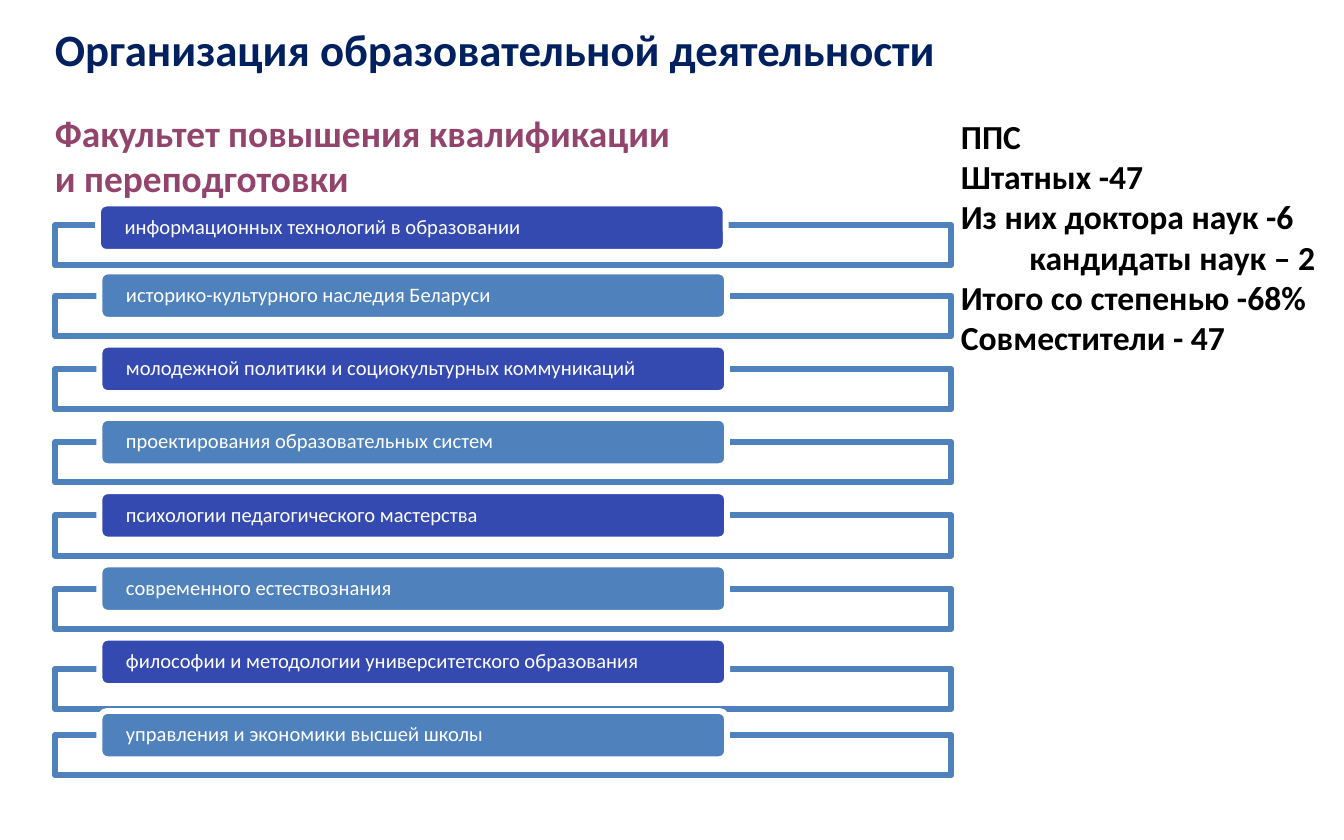
from dataclasses import dataclass

from lxml.etree import SubElement
from pptx import Presentation
from pptx.dml.color import RGBColor
from pptx.enum.shapes import MSO_SHAPE
from pptx.enum.text import MSO_ANCHOR, MSO_AUTO_SIZE, PP_ALIGN
from pptx.oxml.ns import qn
from pptx.util import Inches, Pt

# Content
TITLE = "Организация образовательной деятельности"
SUBTITLE = "Факультет повышения квалификации и переподготовки"
DEPARTMENTS = [
    "информационных технологий в образовании",
    "историко-культурного наследия Беларуси",
    "молодежной политики и социокультурных коммуникаций",
    "проектирования образовательных систем",
    "психологии педагогического мастерства",
    "современного естествознания",
    "философии и методологии университетского образования",
    "управления и экономики высшей школы",
]
# Staff figures: text and left indent in inches
STAFF = [
    ("ППС", 0),
    ("Штатных -47", 0),
    ("Из них доктора наук -6", 0),
    ("кандидаты наук – 2", 0.51),
    ("Итого со степенью -68%", 0),
    ("Совместители - 47", 0),
]


@dataclass(frozen=True)
class Theme:
    font: str = "Calibri"
    title: str = "002060"
    subtitle: str = "92446D"
    body: str = "000000"
    white: str = "FFFFFF"
    dark: str = "354AB1"
    light: str = "4F81BD"
    title_size: int = 24
    subtitle_size: int = 20
    body_size: int = 18
    label_size: int = 11
    line_width: float = 3.15


THEME = Theme()

# Grid of department rows, in inches
FRAME_LEFT, FRAME_WIDTH, FRAME_HEIGHT = 0.41, 6.67, 0.3
LABEL_LEFT, LABEL_WIDTH, LABEL_HEIGHT = 0.74, 4.67, 0.36
SECOND_LABEL_TOP, LAST_LABEL_TOP = 2.02, 5.29
ROW_PITCH = (LAST_LABEL_TOP - SECOND_LABEL_TOP) / (len(DEPARTMENTS) - 2)
FRAME_DROP = 0.18
# Rows that sit slightly off the grid
LABEL_NUDGE = {0: (-0.01, 0.04)}
FRAME_NUDGE = {0: 0.02, 6: 0.05}


def write_text(shape, lines, size, color, bold=False, inset=(0.1, 0.05),
               anchor=MSO_ANCHOR.TOP, wrap=True, spacing=None, grow=False):
    """Fill a shape with (text, indent) lines in one format."""
    frame = shape.text_frame
    frame.word_wrap = wrap
    frame.vertical_anchor = anchor
    frame.auto_size = MSO_AUTO_SIZE.SHAPE_TO_FIT_TEXT if grow else MSO_AUTO_SIZE.NONE
    frame.margin_left = frame.margin_right = Inches(inset[0])
    frame.margin_top = frame.margin_bottom = Inches(inset[1])
    for number, (text, indent) in enumerate(lines):
        para = frame.add_paragraph() if number else frame.paragraphs[0]
        para.alignment = PP_ALIGN.LEFT
        if indent:
            para._p.get_or_add_pPr().set("marL", str(Inches(indent)))
        if spacing:
            para.line_spacing = spacing
        span = para.add_run()
        span.text = text
        span.font.name = THEME.font
        span.font.size = Pt(size)
        span.font.bold = bold
        span.font.color.rgb = RGBColor.from_string(color)


def add_box(page, left, top, width, height, lines, size, color, **style):
    box = page.shapes.add_textbox(*map(Inches, (left, top, width, height)))
    write_text(box, lines, size, color, bold=True, grow=True, **style)


def add_panel(page, kind, left, top, width, height, fill, line):
    panel = page.shapes.add_shape(kind, *map(Inches, (left, top, width, height)))
    panel.shadow.inherit = False
    panel.fill.solid()
    panel.fill.fore_color.rgb = RGBColor.from_string(fill)
    panel.line.color.rgb = RGBColor.from_string(line)
    panel.line.width = Pt(THEME.line_width)
    return panel


def add_department(page, row, name):
    grid_top = SECOND_LABEL_TOP + (row - 1) * ROW_PITCH
    # Wide outlined frame, 90% opaque
    frame = add_panel(page, MSO_SHAPE.RECTANGLE, FRAME_LEFT,
                      grid_top + FRAME_DROP + FRAME_NUDGE.get(row, 0),
                      FRAME_WIDTH, FRAME_HEIGHT, THEME.white, THEME.light)
    fill_color = frame._element.spPr.find(qn("a:solidFill"))[0]
    SubElement(fill_color, qn("a:alpha")).set("val", "90000")
    # Label across the top edge of the frame
    shift_x, shift_y = LABEL_NUDGE.get(row, (0, 0))
    label = add_panel(page, MSO_SHAPE.ROUNDED_RECTANGLE, LABEL_LEFT + shift_x,
                      grid_top + shift_y, LABEL_WIDTH, LABEL_HEIGHT,
                      THEME.light if row % 2 else THEME.dark, THEME.white)
    write_text(label, [(name, 0)], THEME.label_size, THEME.white,
               inset=(0.18, 0), anchor=MSO_ANCHOR.MIDDLE, spacing=0.9)


def main():
    deck = Presentation()
    deck.slide_width, deck.slide_height = Inches(10), Inches(6.25)
    page = deck.slides.add_slide(deck.slide_layouts[6])

    # Departments
    for row, name in enumerate(DEPARTMENTS):
        add_department(page, row, name)

    # Headings
    add_box(page, 0.31, 0.77, 4.79, 0.77, [(SUBTITLE, 0)],
            THEME.subtitle_size, THEME.subtitle)
    add_box(page, 0.31, 0.11, 8.6, 0.5, [(TITLE, 0)],
            THEME.title_size, THEME.title)

    # Staff figures
    add_box(page, 7.15, 0.86, 2.67, 1.82, STAFF, THEME.body_size, THEME.body,
            inset=(0, 0), wrap=False)

    deck.save("out.pptx")


if __name__ == "__main__":
    main()
